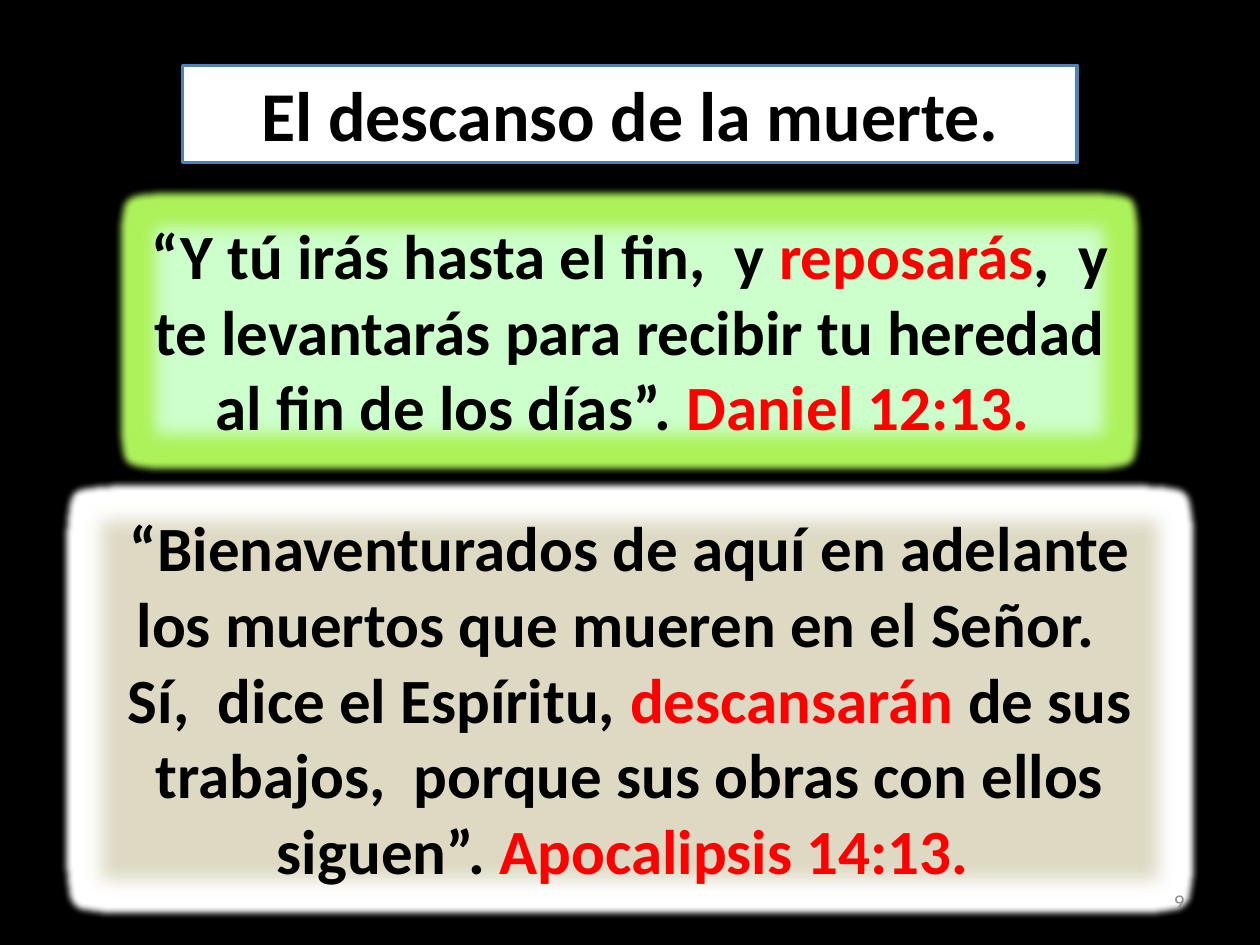
import pptx
import pptx.util
import pptx.dml.color
import pptx.enum.text
import pptx.oxml
from dataclasses import dataclass
from lxml import etree

Inches, Pt = pptx.util.Inches, pptx.util.Pt
RGB = pptx.dml.color.RGBColor.from_string
ALIGN = pptx.enum.text.PP_ALIGN
ANCHOR = pptx.enum.text.MSO_ANCHOR
NS = "http://schemas.openxmlformats.org/drawingml/2006/main"


@dataclass(frozen=True)
class Theme:
    font: str = "Calibri"
    title_size: int = 40
    verse_size: int = 36
    number_size: int = 12
    back: str = "000000"
    ink: str = "000000"
    accent: str = "FF0000"
    title_fill: str = "FFFFFF"
    title_line: str = "4F81BD"
    title_outline: str = "0000CC"
    number: str = "8C8C8C"
    daniel: tuple = ("CCFFCC", "98B955", "ADF25A")
    apocalipsis: tuple = ("DDD9C3", "BF4C48", "FFFFFF")


class Deck:
    """Holds the theme and the current slide."""

    def __init__(self, prs, theme):
        self.theme = theme
        self.s = prs.slides.add_slide(prs.slide_layouts[5])
        fill = self.s.background.fill
        fill.solid()
        fill.fore_color.rgb = RGB(theme.back)

    def style(self, r, size, color, bold=True, outline=None):
        r.font.name, r.font.size, r.font.bold = self.theme.font, Pt(size), bold
        r.font.color.rgb = RGB(color)
        if outline:
            r.font._element.insert(0, pptx.oxml.parse_xml(
                f'<a:ln xmlns:a="{NS}" w="9525"><a:solidFill>'
                f'<a:srgbClr val="{outline}"/></a:solidFill></a:ln>'))

    def paint(self, sp, fill, line, width):
        sp.fill.solid()
        sp.fill.fore_color.rgb = RGB(fill)
        sp.line.color.rgb = RGB(line)
        sp.line.width = Pt(width)

    def title(self, text, box):
        t, sp = self.theme, self.s.shapes.title
        sp.left, sp.top, sp.width, sp.height = map(Inches, box)
        self.paint(sp, t.title_fill, t.title_line, 2)
        tf = sp.text_frame
        tf.text = text
        tf.auto_size = pptx.enum.text.MSO_AUTO_SIZE.NONE
        tf.vertical_anchor = ANCHOR.TOP
        p = tf.paragraphs[0]
        p.alignment = ALIGN.CENTER
        self.style(p.runs[0], t.title_size, t.ink, outline=t.title_outline)

    def verse(self, paragraphs, box, colors):
        t = self.theme
        fill, line, glow = colors
        sp = self.s.shapes.add_shape(1, *map(Inches, box))
        self.paint(sp, fill, line, 0.75)
        sp.shadow.inherit = False
        effects = sp._element.spPr.find(f"{{{NS}}}effectLst")
        halo = etree.SubElement(effects, f"{{{NS}}}glow", rad="101600")
        etree.SubElement(halo, f"{{{NS}}}srgbClr", val=glow)
        etree.SubElement(effects, f"{{{NS}}}softEdge", rad="127000")
        tf = sp.text_frame
        tf.word_wrap = True
        tf.vertical_anchor = ANCHOR.TOP
        for i, parts in enumerate(paragraphs):
            p = tf.add_paragraph() if i else tf.paragraphs[0]
            p.alignment = ALIGN.CENTER
            for j, text in enumerate(parts):
                r = p.add_run()
                r.text = text
                color = t.accent if j % 2 else t.ink
                self.style(r, t.verse_size, color, outline=color)

    def number(self, text, box):
        tf = self.s.shapes.add_textbox(*map(Inches, box)).text_frame
        tf.word_wrap = True
        tf.vertical_anchor = ANCHOR.MIDDLE
        tf.text = text
        p = tf.paragraphs[0]
        p.alignment = ALIGN.RIGHT
        self.style(p.runs[0], self.theme.number_size, self.theme.number, bold=False)


def main():
    prs = pptx.Presentation()
    prs.slide_width, prs.slide_height = Inches(10), Inches(7.5)
    theme = Theme()
    deck = Deck(prs, theme)
    deck.title("El descanso de la muerte.", (1.45, 0.52, 7.1, 0.77))
    deck.verse([("“Y tú irás hasta el fin,  y ", "reposarás",
                 ",  y te levantarás para recibir tu heredad al fin de los días”. ",
                 "Daniel 12:13. ")],
               (1.1, 1.67, 7.8, 1.92), theme.daniel)
    deck.verse([("“Bienaventurados de aquí en adelante los muertos que mueren en el Señor.  ",),
                ("Sí,  dice el Espíritu, ", "descansarán ",
                 "de sus trabajos,  porque sus obras con ellos siguen”. ",
                 "Apocalipsis 14:13. ")],
               (0.67, 3.99, 8.66, 3.13), theme.apocalipsis)
    deck.number("9", (7.17, 6.95, 2.33, 0.4))
    prs.save("out.pptx")


if __name__ == "__main__":
    main()
